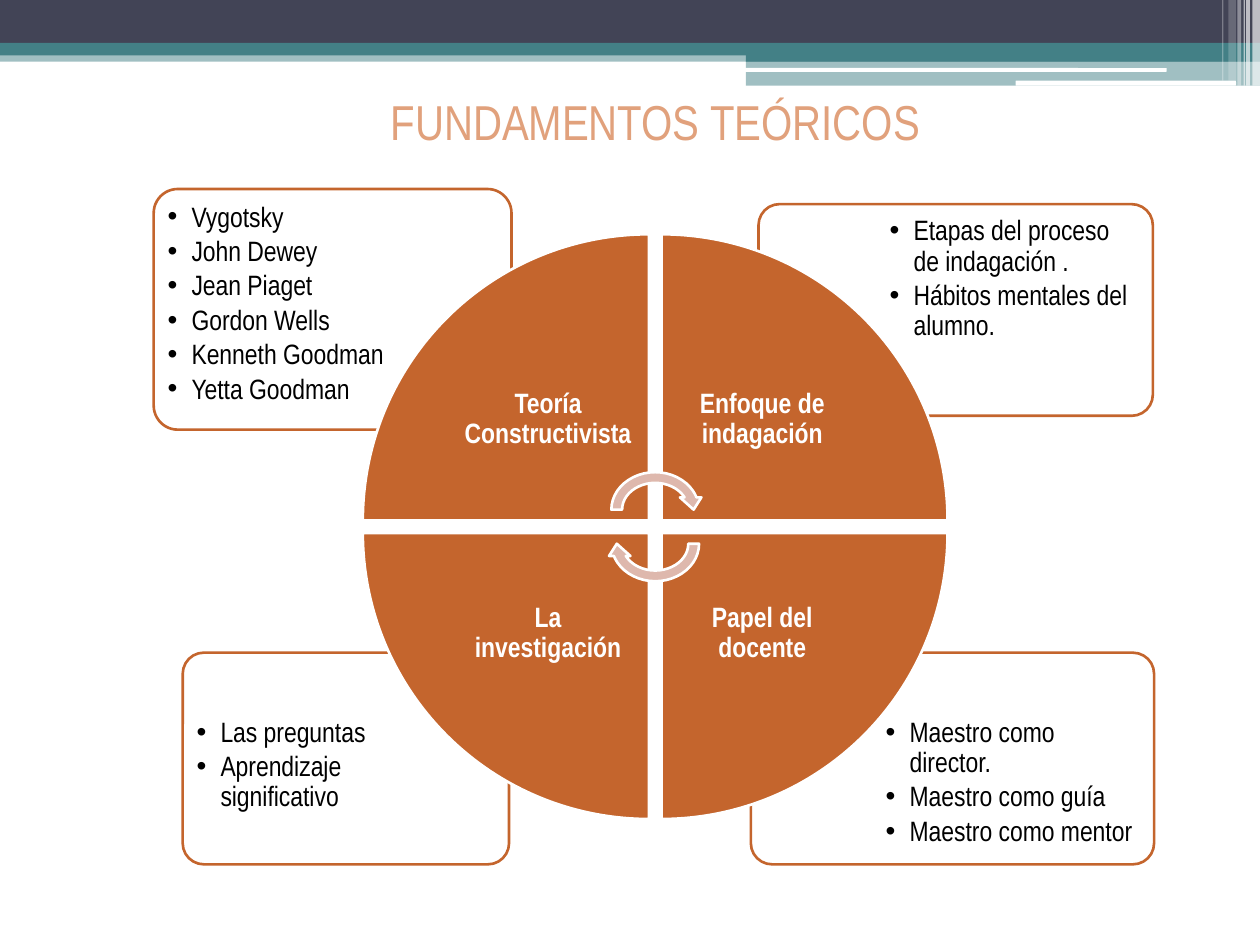
from lxml import etree
from pptx import Presentation
from pptx.dml.color import RGBColor
from pptx.enum.shapes import MSO_SHAPE
from pptx.enum.text import MSO_ANCHOR, PP_ALIGN
from pptx.oxml.ns import qn
from pptx.util import Inches, Pt

RECT = MSO_SHAPE.RECTANGLE
ROUNDED = MSO_SHAPE.ROUNDED_RECTANGLE
WEDGE = MSO_SHAPE.PIE_WEDGE
ARROW = MSO_SHAPE.CIRCULAR_ARROW
TOP, MIDDLE = MSO_ANCHOR.TOP, MSO_ANCHOR.MIDDLE
CENTER, LEFT = PP_ALIGN.CENTER, PP_ALIGN.LEFT

COLUMNS, ROWS = 100, 75
CELL = Inches(0.1)
FONT = "Arial Narrow"
WHITE, BLACK, NAVY, TEAL = "FFFFFF", "000000", "424456", "438086"
ORANGE, PINK, PEACH = "C4652D", "DEB8AD", "E1A17C"

BANDS = [
    (RECT, (0, 4, 100, 0.9), TEAL, 50),
    (RECT, (0, 0, 100, 3.4), NAVY, 100),
    (RECT, (0, 3.4, 100, 1), TEAL, 100),
    (RECT, (59.2, 3.9, 40.8, 1), TEAL, 100),
    (RECT, (59.2, 4.8, 40.8, 2), TEAL, 50),
    (ROUNDED, (59.1, 5.4, 33.5, 0.3), WHITE, 100),
    (ROUNDED, (80.6, 6.4, 17.5, 0.4), WHITE, 100),
]
STRIPES = [
    (99.4, 0.6, 6.8, 65), (98.9, 0.3, 6.8, 65), (98.7, 0.1, 6.8, 60),
    (98.2, 0.3, 6.8, 40), (97.5, 0.6, 6.4, 20), (97, 0.1, 6.4, 30),
]
CARDS = [
    ((59.6, 51.8, 32, 16.8), (69.6, 56.3, 21.6, 11.8),
     ["Maestro como director.", "Maestro como guía", "Maestro como mentor"]),
    ((14.5, 51.8, 25.9, 16.8), (14.9, 56.3, 17.4, 11.8),
     ["Las preguntas", "Aprendizaje significativo"]),
    ((60.2, 16.2, 31.3, 16.8), (69.9, 16.5, 21.2, 11.8),
     ["Etapas del proceso de indagación .", "Hábitos mentales del alumno."]),
    ((12.2, 15, 28.4, 19.1), (12.6, 15.4, 19.1, 13.5),
     ["Vygotsky", "John Dewey", "Jean Piaget", "Gordon Wells",
      "Kenneth Goodman", "Yetta Goodman"]),
]
QUADRANTS = [
    ("Teoría Constructivista", -1, -1),
    ("Enfoque de indagación", 1, -1),
    ("Papel del docente", 1, 1),
    ("La investigación", -1, 1),
]
HUB = (52, 41.8)
HALF_GAP, RADIUS, LABEL_SIDE = 0.5, 22.7, 16
ARROW_WIDTH, ARROW_HEIGHT, ARROW_OFFSET = 7.8, 6.8, 1.35


def rgb(color):
    return RGBColor.from_string(color)


def on_grid(area):
    return [round(cells * CELL) for cells in area]


def assign(target, values):
    for name, value in values.items():
        setattr(target, name, value)


def add_figure(slide, kind, area, color, opacity=100, outline=None, rotation=0):
    figure = slide.shapes.add_shape(kind, *on_grid(area))
    figure.shadow.inherit = False
    figure.rotation = rotation
    figure.fill.solid()
    figure.fill.fore_color.rgb = rgb(color)
    if opacity < 100:
        tint = figure.fill._xPr.find(".//" + qn("a:srgbClr"))
        etree.SubElement(tint, qn("a:alpha"), val=str(opacity * 1000))
    if outline:
        figure.line.color.rgb = rgb(outline)
        figure.line.width = Pt(1.5)
    else:
        figure.line.fill.background()
    return figure


def add_bullet(paragraph):
    properties = paragraph._p.get_or_add_pPr()
    indent = Inches(0.19)
    properties.set("marL", str(indent))
    properties.set("indent", str(-indent))
    etree.SubElement(properties, qn("a:buFont"), typeface="Arial")
    etree.SubElement(properties, qn("a:buChar"), char="•")


def add_text(slide, area, lines, color, inset, anchor, spacing,
             align=LEFT, bold=False, bulleted=False):
    frame = slide.shapes.add_textbox(*on_grid(area)).text_frame
    assign(frame, {"word_wrap": True, "vertical_anchor": anchor})
    for side in ("left", "right", "top", "bottom"):
        setattr(frame, f"margin_{side}", Inches(inset))
    frame.text = "\n".join(lines)
    for paragraph in frame.paragraphs:
        if bulleted:
            add_bullet(paragraph)
        assign(paragraph, {"alignment": align, "line_spacing": 0.9,
                           "space_after": Pt(spacing)})
        assign(paragraph.font, {"name": FONT, "size": Pt(16), "bold": bold})
        paragraph.font.color.rgb = rgb(color)


def add_header(slide):
    for kind, area, color, opacity in BANDS:
        add_figure(slide, kind, area, color, opacity)
    for left, width, height, opacity in STRIPES:
        add_figure(slide, RECT, (left, 0, width, height), WHITE, opacity)


def add_card(slide, frame_area, text_area, items):
    card = add_figure(slide, ROUNDED, frame_area, WHITE, 90, ORANGE)
    card.adjustments[0] = 0.1
    add_text(slide, text_area, items, BLACK, 0.07, TOP, 2.4, bulleted=True)


def quadrant_area(across, down, side):
    corner = [center + direction * HALF_GAP - (side if direction < 0 else 0)
              for center, direction in zip(HUB, (across, down))]
    return (*corner, side, side)


def add_wheel(slide):
    for turn, (label, across, down) in enumerate(QUADRANTS):
        add_figure(slide, WEDGE, quadrant_area(across, down, RADIUS), ORANGE,
                   outline=WHITE, rotation=90 * turn)
        add_text(slide, quadrant_area(across, down, LABEL_SIDE), [label], WHITE,
                 0.12, MIDDLE, 5.6, align=CENTER, bold=True)
    for direction, rotation in ((-1, 0), (1, 180)):
        area = (HUB[0] - ARROW_WIDTH / 2,
                HUB[1] + direction * ARROW_OFFSET - ARROW_HEIGHT / 2,
                ARROW_WIDTH, ARROW_HEIGHT)
        add_figure(slide, ARROW, area, PINK, outline=WHITE, rotation=rotation)


def set_title(slide, text):
    title = slide.shapes.title
    assign(title, dict(zip(("left", "top", "width", "height"),
                           on_grid((19.3, 6.8, 65.4, 5.7)))))
    title.text_frame.text = text
    assign(title.text_frame, {"word_wrap": True, "vertical_anchor": TOP})
    paragraph = title.text_frame.paragraphs[0]
    paragraph.alignment = CENTER
    assign(paragraph.font, {"name": FONT, "size": Pt(28)})
    paragraph.font.color.rgb = rgb(PEACH)


def main():
    deck = Presentation()
    assign(deck, {"slide_width": COLUMNS * CELL, "slide_height": ROWS * CELL})
    slide = deck.slides.add_slide(deck.slide_layouts.get_by_name("Title Only"))
    set_title(slide, "FUNDAMENTOS TEÓRICOS")
    add_header(slide)
    for card in CARDS:
        add_card(slide, *card)
    add_wheel(slide)
    deck.save("out.pptx")


if __name__ == "__main__":
    main()
